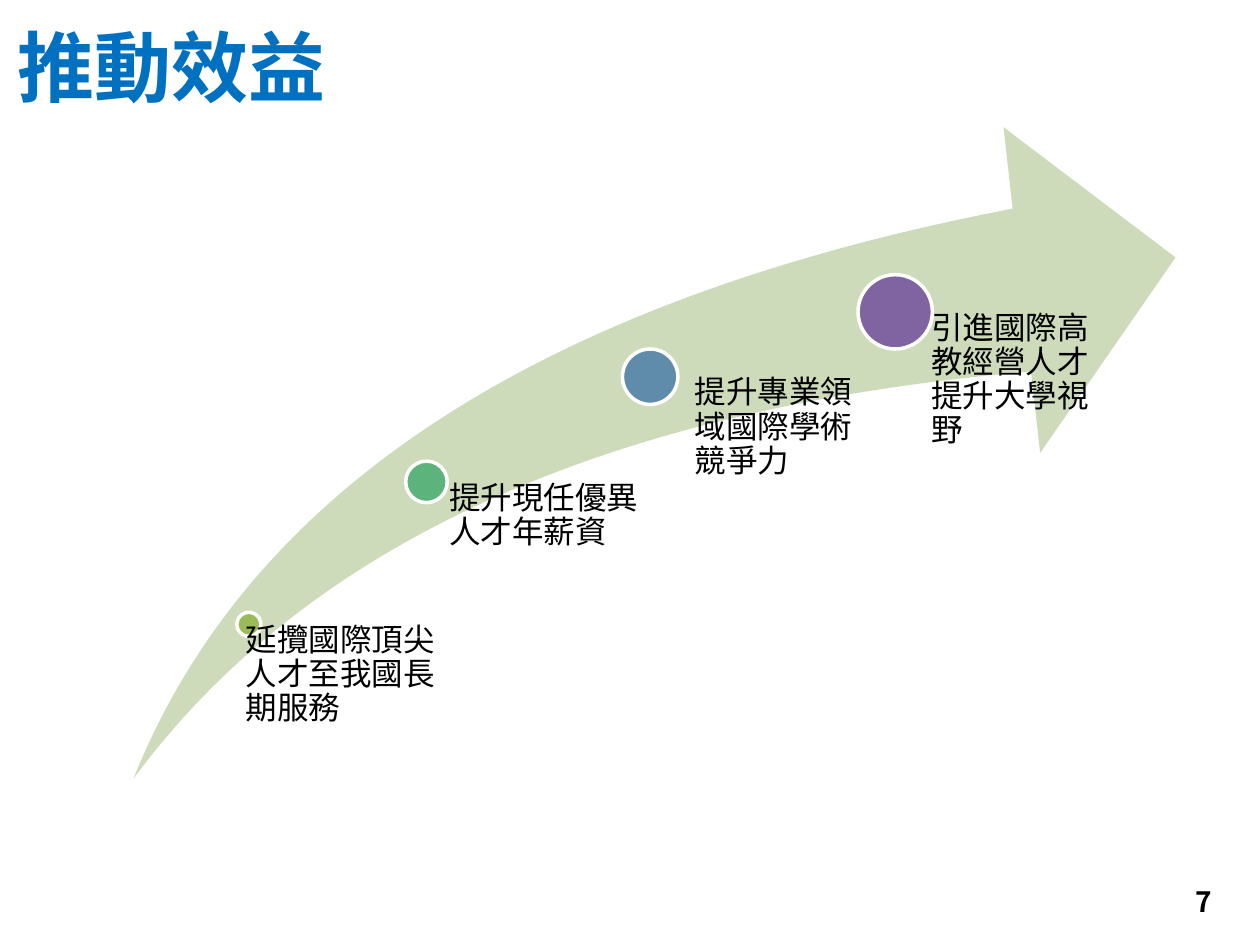
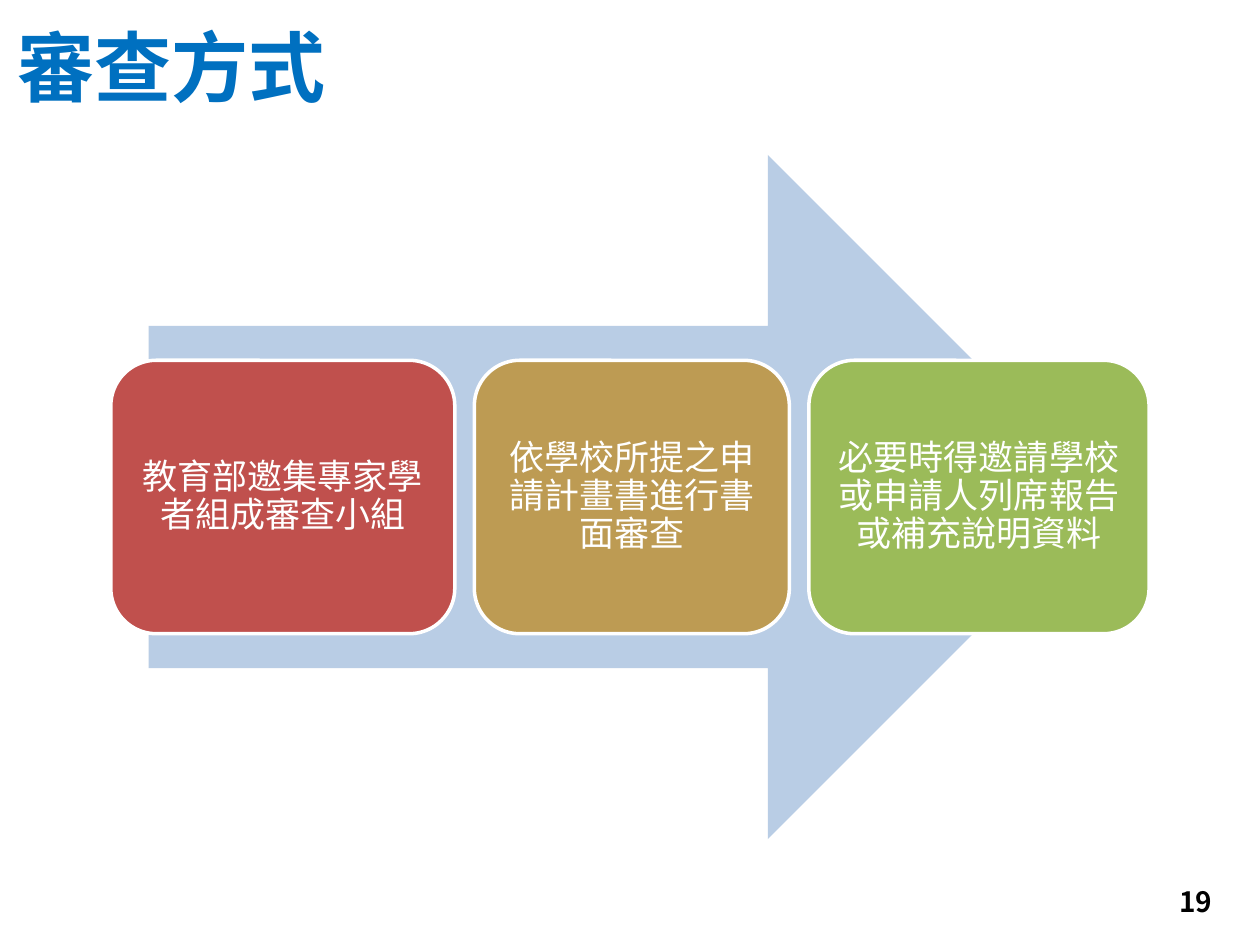
from dataclasses import dataclass

from lxml import etree
from pptx import Presentation
from pptx.dml.color import RGBColor
from pptx.enum import shapes, text
from pptx.oxml.ns import qn
from pptx.util import Inches, Pt

KIND = shapes.MSO_SHAPE
ALIGN = text.PP_ALIGN
MIDDLE = text.MSO_ANCHOR.MIDDLE


@dataclass(frozen=True)
class Theme:
    font: str = "Noto Sans CJK SC"
    title: str = "0070C0"
    ink: str = "000000"
    white: str = "FFFFFF"
    swoosh: str = "CEDBBB"
    arrow: str = "B9CDE5"
    green: str = "9BBB59"
    teal: str = "5CB37C"
    blue: str = "608CAB"
    purple: str = "8064A2"
    red: str = "C0504D"
    gold: str = "BD9B53"
    head_size: int = 44
    step_size: int = 20
    label_size: int = 18
    page_size: int = 16
    edge: int = 2
    leading: float = 0.9


T = Theme()

# dot left, top, size; label left, width (inches from the arrow's corner)
GAINS = [
    (0.82, 3.85, 0.19, 0.79, 1.66, T.green, "延攬國際頂尖人才至我國長期服務"),
    (2.16, 2.65, 0.33, 2.33, 1.74, T.teal, "提升現任優異人才年薪資"),
    (3.88, 1.76, 0.44, 4.22, 1.49, T.blue, "提升專業領域國際學術競爭力"),
    (5.75, 1.17, 0.59, 6.02, 1.76, T.purple, "引進國際高教經營人才提升大學視野"),
]
STEPS = [
    (2.73, T.red, "教育部邀集專家學者組成審查小組"),
    (2.50, T.gold, "依學校所提之申請計畫書進行書面審查"),
    (2.70, T.green, "必要時得邀請學校或申請人列席報告或補充說明資料"),
]


def write(shape, words, size, color, bold=False, align=ALIGN.LEFT,
          anchor=MIDDLE, pads=(0.1, 0.05, 0.1, 0.05), leading=None):
    """Fill a shape with one run; pads are left, top, right, bottom."""
    frame = shape.text_frame
    frame.word_wrap = True
    frame.vertical_anchor = anchor
    (frame.margin_left, frame.margin_top,
     frame.margin_right, frame.margin_bottom) = map(Inches, pads)
    para = frame.paragraphs[0]
    para.alignment = align
    para.line_spacing = leading
    run = para.add_run()
    run.text = words
    font = run.font
    font.name, font.size, font.bold = T.font, Pt(size), bold
    font.color.rgb = RGBColor.from_string(color)
    etree.SubElement(run._r.get_or_add_rPr(), qn("a:ea"), typeface=T.font)


def add_text(slide, box, *args, **style):
    write(slide.shapes.add_textbox(*map(Inches, box)), *args, **style)


def add_form(slide, kind, box, fill, edged=False):
    form = slide.shapes.add_shape(kind, *map(Inches, box))
    form.shadow.inherit = False
    form.fill.solid()
    form.fill.fore_color.rgb = RGBColor.from_string(fill)
    if edged:
        form.line.color.rgb = RGBColor.from_string(T.white)
        form.line.width = Pt(T.edge)
    else:
        form.line.fill.background()
    return form


def add_page(deck, title, number):
    """Add a slide with the shared title and page number."""
    slide = deck.slides.add_slide(deck.slide_layouts[6])
    add_text(slide, (0.04, 0.05, 9, 0.94), title, T.head_size, T.title, bold=True)
    add_text(slide, (7.39, 6.95, 2.33, 0.4), str(number), T.page_size, T.ink,
             bold=True, align=ALIGN.RIGHT)
    return slide


def draw_gains(slide, box):
    """Swoosh with growing dots; each label runs from dot centre to box foot."""
    x, y, _, high = box
    swoosh = add_form(slide, KIND.SWOOSH_ARROW, box, T.swoosh)
    swoosh.adjustments[0] = swoosh.adjustments[1] = 0.25
    for left, top, size, start, wide, color, words in GAINS:
        add_form(slide, KIND.OVAL, (x + left, y + top, size, size), color, edged=True)
        mid = top + size / 2
        add_text(slide, (x + start, y + mid, wide, high - mid), words,
                 T.label_size, T.ink, anchor=text.MSO_ANCHOR.TOP,
                 pads=(size * 0.53, 0, 0, 0), leading=T.leading)


def draw_steps(slide, box):
    """Row of cards spread over the box with equal gaps."""
    x, y, wide, high = box
    gap = (wide - sum(step[0] for step in STEPS)) / (len(STEPS) - 1)
    for span, color, words in STEPS:
        card = add_form(slide, KIND.ROUNDED_RECTANGLE, (x, y, span, high), color,
                        edged=True)
        write(card, words, T.step_size, T.white, align=ALIGN.CENTER,
              pads=(0.08,) * 4, leading=T.leading)
        x += span + gap


def main():
    deck = Presentation()
    deck.slide_width, deck.slide_height = Inches(10), Inches(7.5)
    draw_gains(add_page(deck, "推動效益", 7), (1.06, 1.01, 8.27, 5.17))
    review = add_page(deck, "審查方式", 19)
    add_form(review, KIND.RIGHT_ARROW, (1.18, 1.23, 7.63, 5.43), T.arrow)
    draw_steps(review, (0.88, 2.86, 8.24, 2.17))
    deck.save("out.pptx")


if __name__ == "__main__":
    main()
